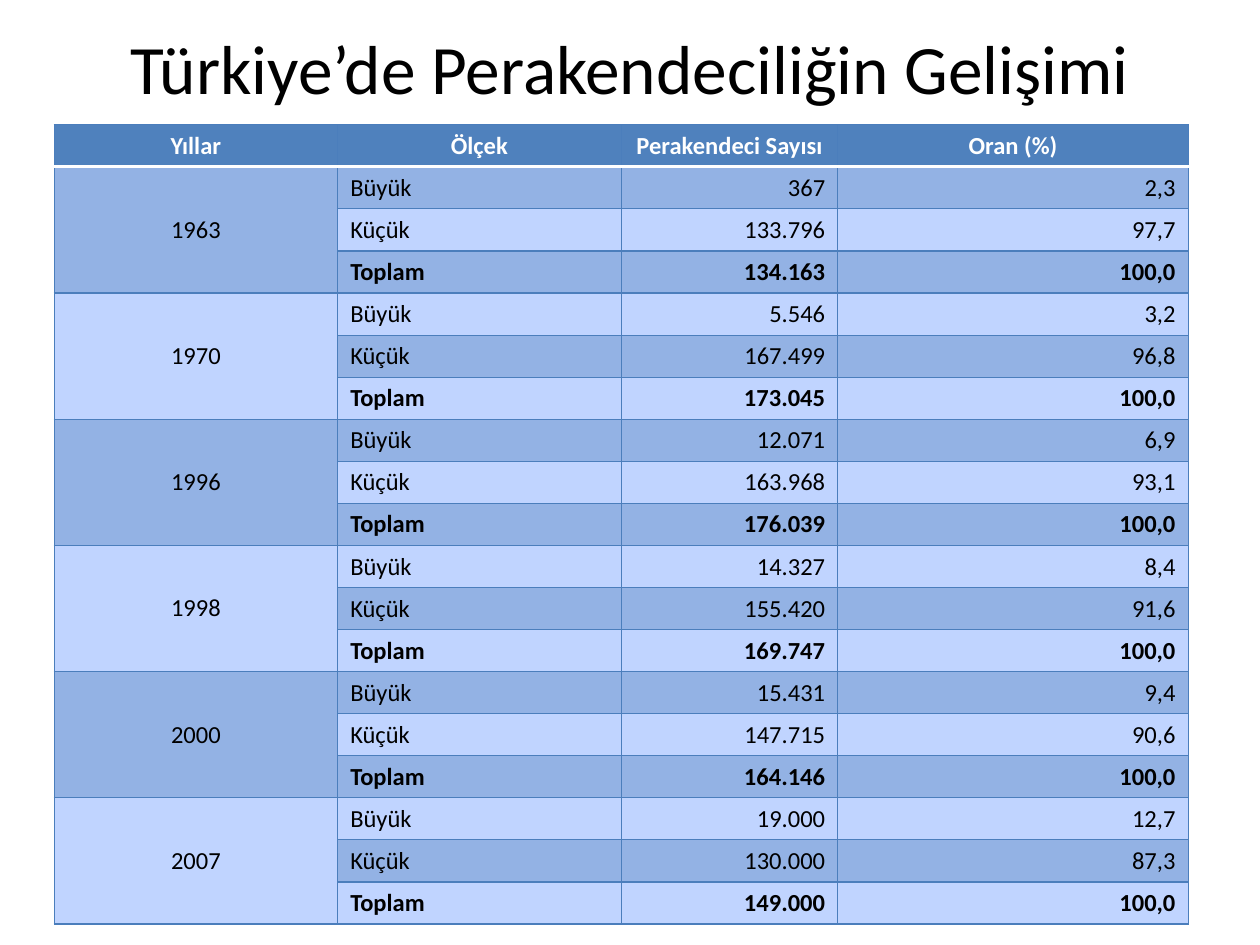
"""Build a slide with a table on the growth of retailing in Türkiye."""
from lxml import etree
from pptx import Presentation
from pptx.dml.color import RGBColor
from pptx.enum.text import MSO_ANCHOR, PP_ALIGN
from pptx.oxml.ns import qn
from pptx.util import Inches, Pt

LEFT, CENTER, RIGHT = PP_ALIGN.LEFT, PP_ALIGN.CENTER, PP_ALIGN.RIGHT
TOP, MIDDLE = MSO_ANCHOR.TOP, MSO_ANCHOR.MIDDLE
BLACK = RGBColor(0x00, 0x00, 0x00)
WHITE = RGBColor(0xFF, 0xFF, 0xFF)
BLUE = RGBColor(0x4F, 0x81, 0xBD)
EDGE = RGBColor(0x4B, 0x7E, 0xBC)
DARK = RGBColor(0x93, 0xB2, 0xE4)
LIGHT = RGBColor(0xC0, 0xD4, 0xFF)

HEADS = ["Yıllar", "Ölçek", "Perakendeci Sayısı", "Oran (%)"]
SCALES = ["Büyük", "Küçük", "Toplam"]
YEARS = {
    "1963": [("367", "2,3"), ("133.796", "97,7"), ("134.163", "100,0")],
    "1970": [("5.546", "3,2"), ("167.499", "96,8"), ("173.045", "100,0")],
    "1996": [("12.071", "6,9"), ("163.968", "93,1"), ("176.039", "100,0")],
    "1998": [("14.327", "8,4"), ("155.420", "91,6"), ("169.747", "100,0")],
    "2000": [("15.431", "9,4"), ("147.715", "90,6"), ("164.146", "100,0")],
    "2007": [("19.000", "12,7"), ("130.000", "87,3"), ("149.000", "100,0")],
}
WIDTHS = [2.25, 2.25, 1.72, 2.78]


def write(frame, text, size=14, color=BLACK, bold=False, align=LEFT):
    para = frame.paragraphs[0]
    para.alignment = align
    run = para.add_run()
    run.text = text
    font = run.font
    font.name, font.size, font.bold = "Calibri", Pt(size), bold
    font.color.rgb = color


def border(cell, sides):
    props = cell._tc.get_or_add_tcPr()
    for spot, (side, (color, width)) in enumerate(sides.items()):
        line = etree.Element(qn("a:ln" + side), w=str(Pt(width)))
        fill = etree.SubElement(line, qn("a:solidFill"))
        etree.SubElement(fill, qn("a:srgbClr"), val=str(color))
        props.insert(spot, line)


prs = Presentation()
prs.slide_width, prs.slide_height = Inches(10), Inches(7.5)
slide = prs.slides.add_slide(prs.slide_layouts[6])

title = slide.shapes.add_textbox(Inches(0.5), Inches(0.3), Inches(9), Inches(0.46))
frame = title.text_frame
frame.word_wrap = True
frame.vertical_anchor = MIDDLE
write(frame, "Türkiye’de Perakendeciliğin Gelişimi", size=39.6, align=CENTER)

count = 1 + len(YEARS) * len(SCALES)
table = slide.shapes.add_table(
    count, len(HEADS), Inches(0.43), Inches(0.99), Inches(9), Inches(6.33)
).table
for col, width in zip(table.columns, WIDTHS):
    col.width = Inches(width)

thin, thick = (EDGE, 0.75), (WHITE, 2)
for row in range(count):
    for col in range(len(HEADS)):
        cell = table.cell(row, col)
        band = (row - 1) // 3 * 3 + 1 if col == 0 else row
        cell.fill.solid()
        cell.fill.fore_color.rgb = BLUE if row == 0 else DARK if band % 2 else LIGHT
        border(cell, {
            "L": thin,
            "R": thin,
            "T": thick if row == 1 else thin,
            "B": thick if row == 0 else thin,
        })

for col, head in enumerate(HEADS):
    write(table.cell(0, col).text_frame, head, color=WHITE, bold=True, align=CENTER)

for group, (year, pairs) in enumerate(YEARS.items()):
    first = 1 + group * len(SCALES)
    cell = table.cell(first, 0)
    cell.merge(table.cell(first + len(SCALES) - 1, 0))
    cell.vertical_anchor = MIDDLE
    write(cell.text_frame, year, align=CENTER)
    for step, (scale, pair) in enumerate(zip(SCALES, pairs)):
        for col, text in enumerate([scale, *pair], 1):
            cell = table.cell(first + step, col)
            cell.vertical_anchor = TOP
            write(cell.text_frame, text, bold=scale == "Toplam",
                  align=LEFT if col == 1 else RIGHT)

prs.save("out.pptx")
